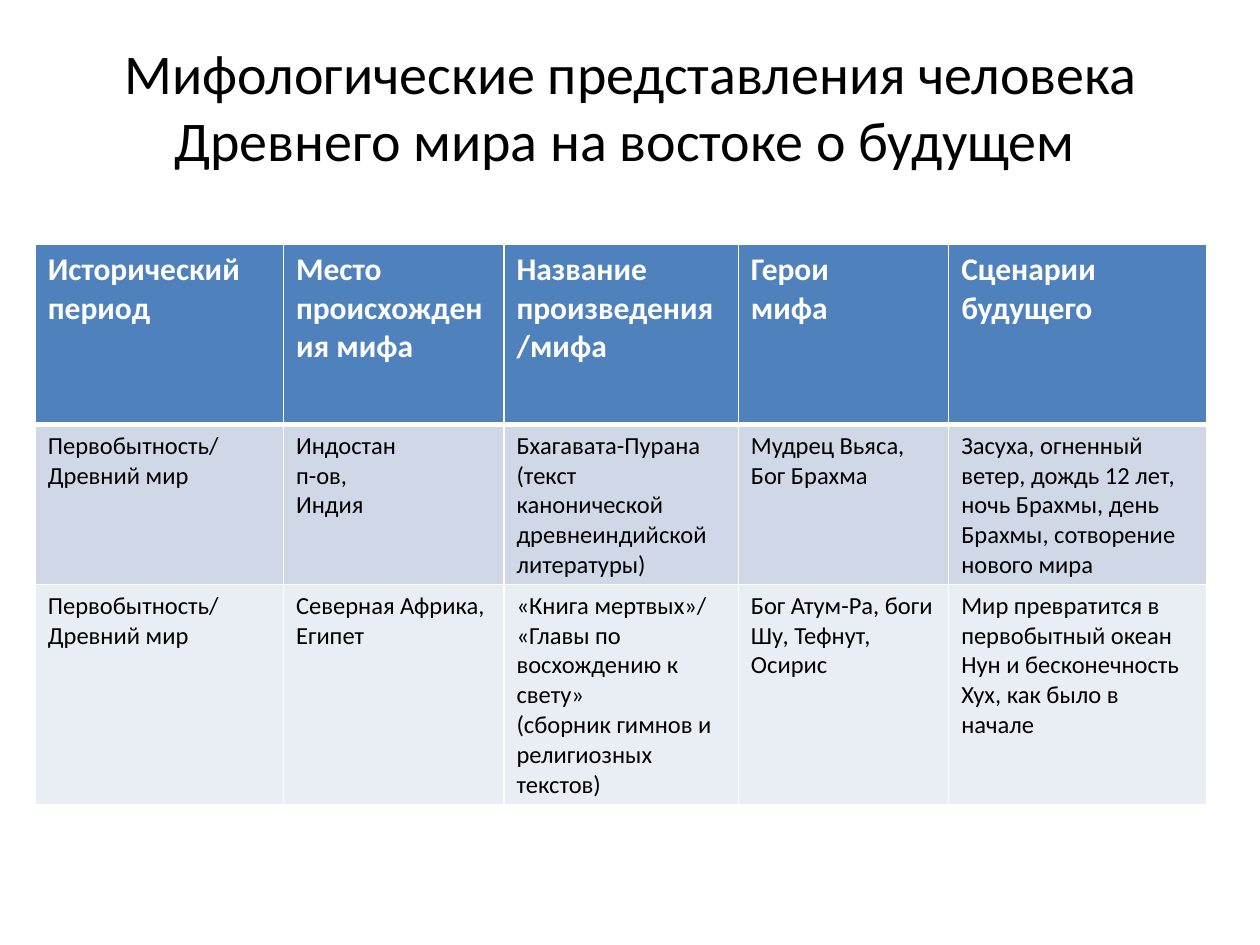
"""Build a slide with a table of ancient Eastern myths about the future."""
from lxml import etree
from pptx import Presentation
from pptx.dml.color import RGBColor
from pptx.enum.text import MSO_ANCHOR, PP_ALIGN
from pptx.oxml.ns import qn
from pptx.util import Inches, Pt

CENTER = PP_ALIGN.CENTER
MIDDLE = MSO_ANCHOR.MIDDLE
FONT = "Calibri"
COLORS = {
    "text": "000000",
    "header_text": "FFFFFF",
    "border": "FFFFFF",
    "header": "4F81BD",
    "odd_row": "D0D8E8",
    "even_row": "E9EDF4",
}
COLUMN_WIDTHS = [1.97, 1.75, 1.86, 1.67, 2.05]
ROW_HEIGHTS = [1.43, 1.27, 1.75]
ROW_FILLS = ["header", "odd_row", "even_row"]
MYTHS = [
    [
        "Исторический  период",
        "Место происхождения мифа",
        "Название\nпроизведения/мифа",
        "Герои\nмифа",
        "Сценарии\nбудущего",
    ],
    [
        "Первобытность/\nДревний мир",
        "Индостан\nп-ов,\nИндия",
        "Бхагавата-Пурана (текст канонической древнеиндийской литературы)",
        "Мудрец Вьяса, Бог Брахма",
        "Засуха, огненный ветер, дождь 12 лет, ночь Брахмы, день Брахмы, "
        "сотворение нового мира",
    ],
    [
        "Первобытность/\nДревний мир",
        "Северная Африка,  Египет",
        "«Книга мертвых»/\n«Главы по восхождению к свету»\n"
        "(сборник гимнов и религиозных текстов)",
        "Бог Атум-Ра, боги Шу, Тефнут, Осирис",
        "Мир превратится в первобытный океан Нун и бесконечность  Хух, "
        "как было в начале",
    ],
]


def write(frame, text, size, color, bold=False, align=None):
    for index, line in enumerate(text.split("\n")):
        paragraph = frame.add_paragraph() if index else frame.paragraphs[0]
        paragraph.alignment = align
        run = paragraph.add_run()
        run.text = line
        run.font.name = FONT
        run.font.size = Pt(size)
        run.font.bold = bold
        run.font.color.rgb = RGBColor.from_string(COLORS[color])


def add_borders(cell, widths):
    properties = cell._tc.get_or_add_tcPr()
    for index, (side, width) in enumerate(widths.items()):
        line = etree.Element(qn(f"a:ln{side}"), w=str(Pt(width)))
        fill = etree.SubElement(line, qn("a:solidFill"))
        etree.SubElement(fill, qn("a:srgbClr"), val=COLORS["border"])
        properties.insert(index, line)


prs = Presentation()
prs.slide_width = Inches(10)
prs.slide_height = Inches(7.5)
slide = prs.slides.add_slide(prs.slide_layouts[6])

title = slide.shapes.add_textbox(
    Inches(0.51), Inches(0.21), Inches(9), Inches(1.25)
).text_frame
title.word_wrap = True
title.vertical_anchor = MIDDLE
write(
    title,
    "Мифологические представления человека Древнего мира на востоке о будущем ",
    32,
    "text",
    align=CENTER,
)

myth_table = slide.shapes.add_table(
    len(ROW_HEIGHTS), len(COLUMN_WIDTHS),
    Inches(0.28), Inches(1.94),
    Inches(sum(COLUMN_WIDTHS)), Inches(sum(ROW_HEIGHTS)),
).table
for column, width in zip(myth_table.columns, COLUMN_WIDTHS):
    column.width = Inches(width)

for row_index, (row, height) in enumerate(zip(myth_table.rows, ROW_HEIGHTS)):
    row.height = Inches(height)
    is_header = row_index == 0
    for cell, text in zip(row.cells, MYTHS[row_index]):
        cell.fill.solid()
        cell.fill.fore_color.rgb = RGBColor.from_string(COLORS[ROW_FILLS[row_index]])
        add_borders(cell, {
            "L": 1,
            "R": 1,
            "T": 3 if row_index == 1 else 1,
            "B": 3 if is_header else 1,
        })
        write(
            cell.text_frame,
            text,
            18 if is_header else 14,
            "header_text" if is_header else "text",
            bold=is_header,
        )

prs.save("out.pptx")
